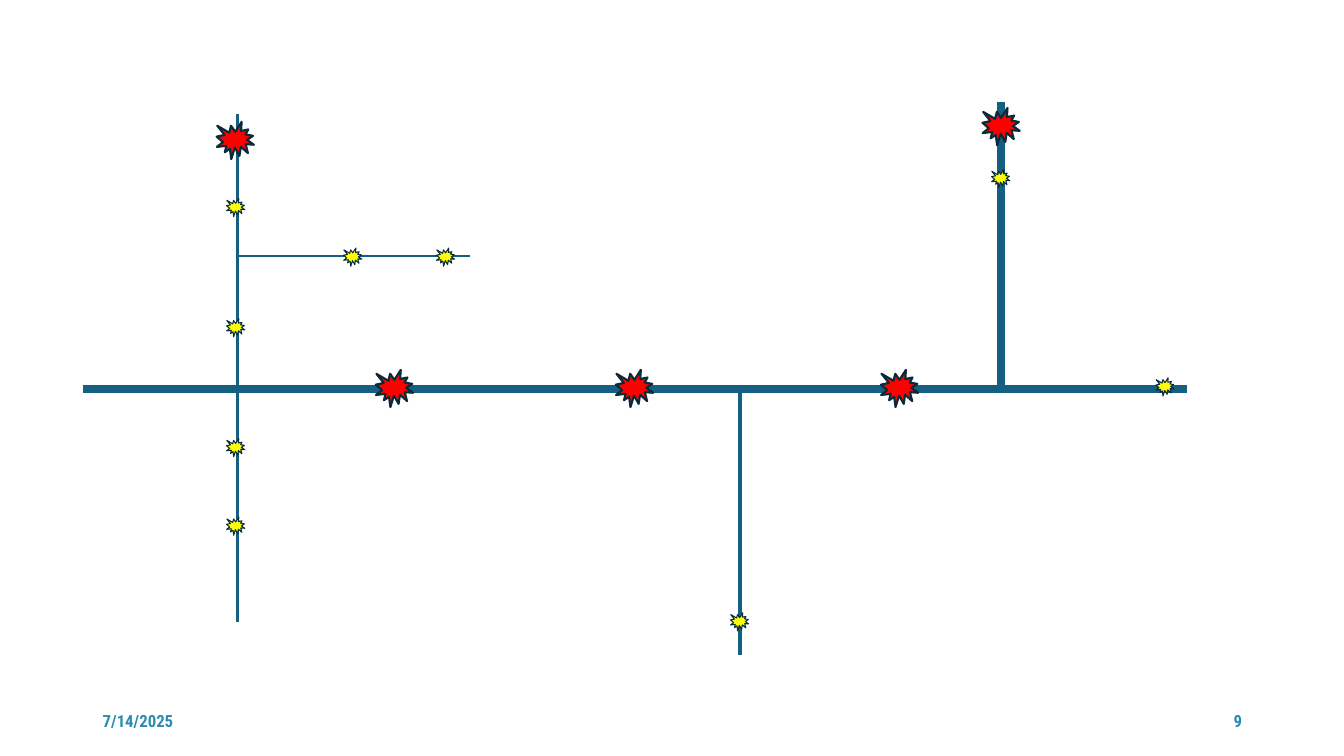
"""Build a slide of a branching line network with large and small bursts."""
import pptx
import pptx.dml.color
import pptx.enum.shapes
import pptx.enum.text
import pptx.oxml.ns
import pptx.util
from lxml import etree
from pptx.util import Cm

TRUNK_BLUE = pptx.dml.color.RGBColor(0x15, 0x60, 0x82)
FOOTER_BLUE = pptx.dml.color.RGBColor(0x2C, 0x8C, 0xB0)
OUTLINE_NAVY = pptx.dml.color.RGBColor(0x09, 0x2A, 0x39)
RED = pptx.dml.color.RGBColor(0xFF, 0x00, 0x00)
YELLOW = pptx.dml.color.RGBColor(0xFF, 0xFF, 0x00)

TRUNK_Y = 9.8
WEST_X = 5.99
SOUTH_X = 18.64
EAST_X = 25.22
SIDE_Y = 6.45

BRANCHES = [
    (2.08, TRUNK_Y, 29.92, TRUNK_Y, 6),
    (WEST_X, 2.87, WEST_X, 15.67, 2.25),
    (EAST_X, 2.57, EAST_X, TRUNK_Y, 6),
    (WEST_X, SIDE_Y, 11.84, SIDE_Y, 1.5),
    (SOUTH_X, TRUNK_Y, SOUTH_X, 16.51, 3),
]
LARGE_BURSTS = [
    (5.93, 3.54), (15.99, 9.79), (9.94, 9.79), (22.67, 9.79), (25.23, 3.19),
]
SMALL_BURSTS = [
    (5.94, 5.23), (11.23, 6.48), (8.89, 6.48), (5.94, 8.26), (5.94, 11.28),
    (5.94, 13.26), (SOUTH_X, 15.67), (EAST_X, 4.5), (29.36, 9.75),
]


def add_footer(slide, left, wording, alignment):
    """Add one footer entry."""
    footer = slide.shapes.add_textbox(Cm(left), Cm(17.65), Cm(7.62), Cm(1.02))
    frame = footer.text_frame
    frame.word_wrap = True
    frame.vertical_anchor = pptx.enum.text.MSO_ANCHOR.MIDDLE
    frame.text = wording
    paragraph = frame.paragraphs[0]
    paragraph.alignment = alignment
    font = paragraph.runs[0].font
    font.name = "Roboto Condensed"
    font.size = pptx.util.Pt(12)
    font.bold = True
    font.color.rgb = FOOTER_BLUE


def add_branch(slide, start_x, start_y, end_x, end_y, weight):
    """Draw one straight line of the network."""
    branch = slide.shapes.add_connector(
        pptx.enum.shapes.MSO_CONNECTOR.STRAIGHT,
        Cm(start_x), Cm(start_y), Cm(end_x), Cm(end_y))
    branch.line.color.rgb = TRUNK_BLUE
    branch.line.width = pptx.util.Pt(weight)
    etree.SubElement(branch._element.spPr, pptx.oxml.ns.qn("a:effectLst"))


def add_burst(slide, center, size, fill, weight):
    """Draw one burst around its centre."""
    x, y = center
    burst = slide.shapes.add_shape(
        pptx.enum.shapes.MSO_SHAPE.EXPLOSION1,
        Cm(x - size / 2), Cm(y - size / 2), Cm(size), Cm(size))
    burst.shadow.inherit = False
    burst.fill.solid()
    burst.fill.fore_color.rgb = fill
    burst.line.color.rgb = OUTLINE_NAVY
    burst.line.width = pptx.util.Pt(weight)


def main():
    """Assemble and save the slide."""
    deck = pptx.Presentation()
    deck.slide_width = Cm(33.87)
    deck.slide_height = Cm(19.05)
    slide = deck.slides.add_slide(deck.slide_layouts[6])
    add_footer(slide, 2.34, "7/14/2025", pptx.enum.text.PP_ALIGN.LEFT)
    add_footer(slide, 23.93, "9", pptx.enum.text.PP_ALIGN.RIGHT)
    for branch in BRANCHES:
        add_branch(slide, *branch)
    for center in LARGE_BURSTS:
        add_burst(slide, center, 0.94, RED, 1.5)
    for center in SMALL_BURSTS:
        add_burst(slide, center, 0.46, YELLOW, 0.75)
    deck.save("out.pptx")


if __name__ == "__main__":
    main()
